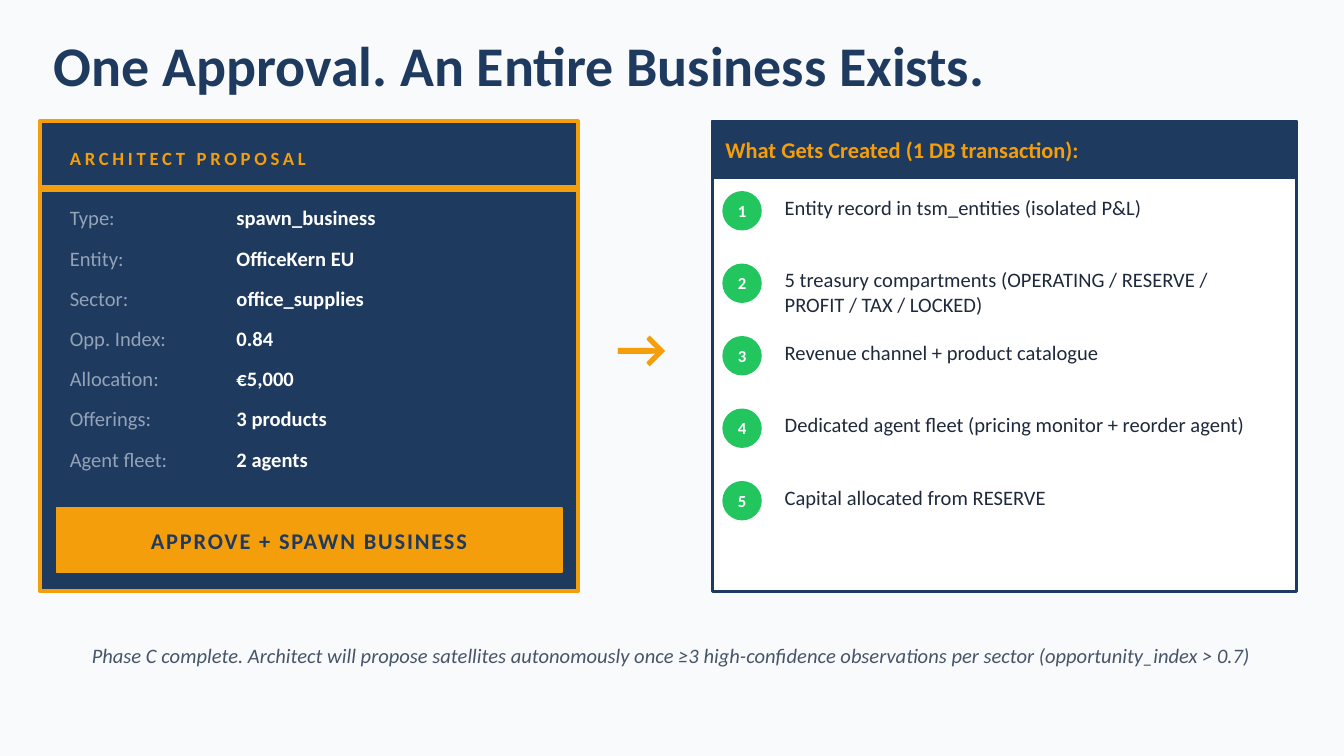
from pptx import Presentation
from pptx.dml.color import RGBColor
from pptx.enum.shapes import MSO_SHAPE
from pptx.enum.text import MSO_ANCHOR, PP_ALIGN
from pptx.util import Cm, Pt

RECT, OVAL = MSO_SHAPE.RECTANGLE, MSO_SHAPE.OVAL
LEFT, MID = PP_ALIGN.LEFT, PP_ALIGN.CENTER
TOP, CENTER = MSO_ANCHOR.TOP, MSO_ANCHOR.MIDDLE
NAVY, AMBER, GREEN, WHITE = "1E3A5F", "F59E0B", "22C55E", "FFFFFF"
PALE, GRAY, SLATE, INK = "F8FAFC", "94A3B8", "475569", "1E293B"

TITLE = "One Approval. An Entire Business Exists."
HEAD = "ARCHITECT PROPOSAL"
FIELDS = [
    ("Type:", "spawn_business"),
    ("Entity:", "OfficeKern EU"),
    ("Sector:", "office_supplies"),
    ("Opp. Index:", "0.84"),
    ("Allocation:", "€5,000"),
    ("Offerings:", "3 products"),
    ("Agent fleet:", "2 agents"),
]
BUTTON = "APPROVE + SPAWN BUSINESS"
RESULT = "What Gets Created (1 DB transaction):"
STEPS = [
    "Entity record in tsm_entities (isolated P&L)",
    "5 treasury compartments (OPERATING / RESERVE / PROFIT / TAX / LOCKED)",
    "Revenue channel + product catalogue",
    "Dedicated agent fleet (pricing monitor + reorder agent)",
    "Capital allocated from RESERVE",
]
FOOT = ("Phase C complete. Architect will propose satellites autonomously once "
        "≥3 high-confidence observations per sector (opportunity_index > 0.7)")

CARD_X, PANEL_X, BODY_Y, BODY_H = 0.76, 13.46, 2.29, 8.89
CARD_W, PANEL_W, PAD_X = 10.16, 11.05, 1.07
ROW_Y, ROW_GAP, STEP_Y, STEP_GAP, DOT = 3.76, 0.76, 3.63, 1.37, 0.71


def color(code):
    return RGBColor.from_string(code)


def write(shape, text, size, ink, bold=False, italic=False, align=LEFT,
          anchor=CENTER, inset=(0.25, 0.13), track=0):
    frame = shape.text_frame
    side, edge = map(Cm, inset)
    layout = {"word_wrap": True, "vertical_anchor": anchor,
              "margin_left": side, "margin_right": side,
              "margin_top": edge, "margin_bottom": edge}
    for name, value in layout.items():
        setattr(frame, name, value)
    para = frame.paragraphs[0]
    para.alignment = align
    run = para.add_run()
    run.text = text
    style = {"name": "Calibri", "size": Pt(size), "bold": bold, "italic": italic}
    for name, value in style.items():
        setattr(run.font, name, value)
    run.font.color.rgb = color(ink)
    if track:
        run._r.get_or_add_rPr().set("spc", str(track * 100))


def label(slide, box, text, size, ink, **style):
    shape = slide.shapes.add_textbox(*map(Cm, box))
    write(shape, text, size, ink, **style)


def block(slide, kind, box, fill, line, width=1):
    shape = slide.shapes.add_shape(kind, *map(Cm, box))
    shape.shadow.inherit = False
    shape.fill.solid()
    shape.fill.fore_color.rgb = color(fill)
    shape.line.color.rgb = color(line)
    shape.line.width = Pt(width)
    return shape


def card(slide):
    block(slide, RECT, (CARD_X, BODY_Y, CARD_W, BODY_H), NAVY, AMBER, 2)
    label(slide, (PAD_X, 2.59, 9.53, 0.81), HEAD, 10, AMBER, bold=True, track=2)
    block(slide, RECT, (CARD_X, 3.51, CARD_W, 0.1), AMBER, AMBER)
    for i, (key, value) in enumerate(FIELDS):
        y = ROW_Y + i * ROW_GAP
        label(slide, (PAD_X, y, 3.05, 0.71), key, 11, GRAY)
        label(slide, (4.22, y, 6.22, 0.71), value, 11, WHITE, bold=True)
    button = block(slide, RECT, (PAD_X, 9.6, 9.55, 1.22), AMBER, AMBER)
    write(button, BUTTON, 12, NAVY, bold=True, align=MID, inset=(0, 0), track=1)


def panel(slide):
    block(slide, RECT, (PANEL_X, BODY_Y, PANEL_W, BODY_H), WHITE, NAVY, 1.5)
    head = block(slide, RECT, (PANEL_X, BODY_Y, PANEL_W, 1.07), NAVY, NAVY)
    write(head, RESULT, 12, AMBER, bold=True, inset=(0.25, 0))
    for i, text in enumerate(STEPS):
        y = STEP_Y + i * STEP_GAP
        dot = block(slide, OVAL, (13.67, y, DOT, DOT), GREEN, GREEN)
        write(dot, str(i + 1), 9, WHITE, bold=True, align=MID, inset=(0, 0))
        label(slide, (14.58, y - 0.08, 9.6, 1.27), text, 11, INK, anchor=TOP)


def main():
    deck = Presentation()
    deck.slide_width, deck.slide_height = Cm(25.4), Cm(14.29)
    slide = deck.slides.add_slide(deck.slide_layouts[6])
    slide.background.fill.solid()
    slide.background.fill.fore_color.rgb = color(PALE)
    label(slide, (1.02, 0.38, 23.37, 1.65), TITLE, 30, NAVY, bold=True, inset=(0, 0))
    card(slide)
    label(slide, (11.18, 5.84, 1.91, 1.4), "→", 30, AMBER, bold=True, align=MID)
    panel(slide)
    label(slide, (CARD_X, 11.56, 23.88, 1.65), FOOT, 11, SLATE, italic=True, align=MID)
    deck.save("out.pptx")


if __name__ == "__main__":
    main()
